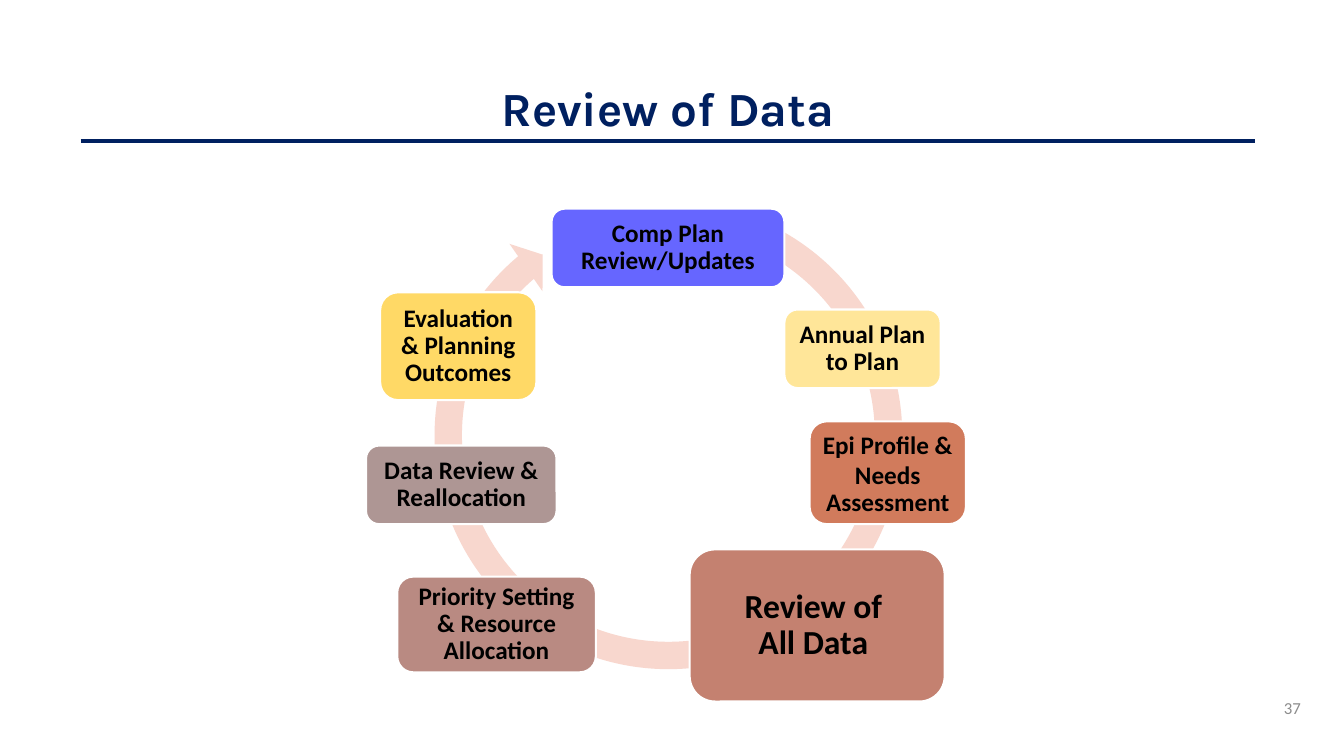
from pptx import Presentation
from pptx.dml.color import RGBColor
from pptx.enum.shapes import MSO_CONNECTOR, MSO_SHAPE
from pptx.enum.text import MSO_ANCHOR, PP_ALIGN
from pptx.oxml.ns import qn
from pptx.util import Inches, Pt
from lxml.etree import SubElement

NAVY = RGBColor(0x00, 0x20, 0x60)
BLACK = RGBColor(0x00, 0x00, 0x00)
WHITE = RGBColor(0xFF, 0xFF, 0xFF)
GREY = RGBColor(0x8C, 0x8C, 0x8C)
PALE_PINK = RGBColor(0xF8, 0xD7, 0xCE)
VIOLET = RGBColor(0x66, 0x66, 0xFF)
CREAM = RGBColor(0xFF, 0xE6, 0x99)
ORANGE = RGBColor(0xD1, 0x7B, 0x5C)
TERRACOTTA = RGBColor(0xC4, 0x81, 0x70)
ROSE = RGBColor(0xB9, 0x8A, 0x82)
MAUVE = RGBColor(0xAE, 0x96, 0x94)
YELLOW = RGBColor(0xFF, 0xD9, 0x66)

# Paragraphs, left, top, width, height, fill, text size, inset
STEPS = [
    (["Comp Plan Review/Updates"], 5.47, 2.07, 2.31, 0.78, VIOLET, 18, 0.07),
    (["Annual Plan to Plan"], 7.78, 3.07, 1.55, 0.78, CREAM, 18, 0.07),
    (["Epi Profile & Needs", "Assessment"], 8.03, 4.18, 1.55, 1.02, ORANGE, 18, 0.07),
    (["Review of ", "All Data "], 6.84, 5.45, 2.53, 1.51, TERRACOTTA, 24, 0.1),
    (["Priority Setting & Resource Allocation"], 3.94, 5.72, 1.97, 0.95, ROSE, 18, 0.07),
    (["Data Review & Reallocation"], 3.63, 4.42, 1.89, 0.78, MAUVE, 18, 0.07),
    (["Evaluation & Planning Outcomes"], 3.77, 2.9, 1.55, 1.07, YELLOW, 18, 0.07),
]


class CycleSlide:
    body_font = "Calibri"
    title_font = "Karla"
    line_spacing = 0.9

    def __init__(self, slide):
        self.shapes = slide.shapes

    def set_text(self, shape, paragraphs, size, color, align=PP_ALIGN.CENTER,
                 font=body_font, bold=True):
        frame = shape.text_frame
        frame.word_wrap = True
        frame.vertical_anchor = MSO_ANCHOR.MIDDLE
        frame.text = "\n".join(paragraphs)
        for paragraph in frame.paragraphs:
            paragraph.alignment = align
            paragraph.line_spacing = self.line_spacing
            paragraph.font.name = font
            paragraph.font.size = Pt(size)
            paragraph.font.bold = bold
            paragraph.font.color.rgb = color
        return frame

    def text(self, content, left, top, width, height, size, color, **style):
        box = self.shapes.add_textbox(Inches(left), Inches(top), Inches(width), Inches(height))
        self.set_text(box, [content], size, color, **style)

    def filled(self, kind, left, top, width, height, fill):
        shape = self.shapes.add_shape(
            kind, Inches(left), Inches(top), Inches(width), Inches(height))
        shape.shadow.inherit = False
        shape.fill.solid()
        shape.fill.fore_color.rgb = fill
        shape.line.fill.background()
        return shape

    def cycle_arrow(self, left, top, size, adjustments):
        arrow = self.filled(MSO_SHAPE.CIRCULAR_ARROW, left, top, size, size, PALE_PINK)
        for index, value in enumerate(adjustments):
            arrow.adjustments[index] = value

    def step(self, paragraphs, left, top, width, height, fill, size, inset):
        box = self.filled(MSO_SHAPE.ROUNDED_RECTANGLE, left, top, width, height, fill)
        box.line.color.rgb = WHITE
        box.line.width = Pt(1.5)
        frame = self.set_text(box, paragraphs, size, BLACK)
        frame.margin_left = frame.margin_right = Inches(inset)
        frame.margin_top = frame.margin_bottom = Inches(inset)
        return frame

    def rule(self, left, right, y):
        line = self.shapes.add_connector(
            MSO_CONNECTOR.STRAIGHT, Inches(left), Inches(y), Inches(right), Inches(y))
        line.line.color.rgb = NAVY
        line.line.width = Pt(2.5)
        SubElement(line._element.spPr, qn("a:effectLst"))


def main():
    deck = Presentation()
    deck.slide_width, deck.slide_height = Inches(13.33), Inches(7.5)
    page = CycleSlide(deck.slides.add_slide(deck.slide_layouts[6]))

    page.text("Review of Data", 0.8, 0.64, 11.65, 0.92, 34, NAVY, font=page.title_font)
    page.cycle_arrow(4.16, 1.85, 4.94, [0.055, 3.307, 137.812, 173.828, 0.058])
    for step in STEPS:
        frame = page.step(*step)
        if step[0][0].startswith("Epi"):
            frame.paragraphs[0].line_spacing = 1.0
    page.text("37", 10.75, 6.83, 2.25, 0.4, 12, GREY, align=PP_ALIGN.RIGHT, bold=False)
    page.rule(0.8, 12.45, 1.4)

    deck.save("out.pptx")


if __name__ == "__main__":
    main()
